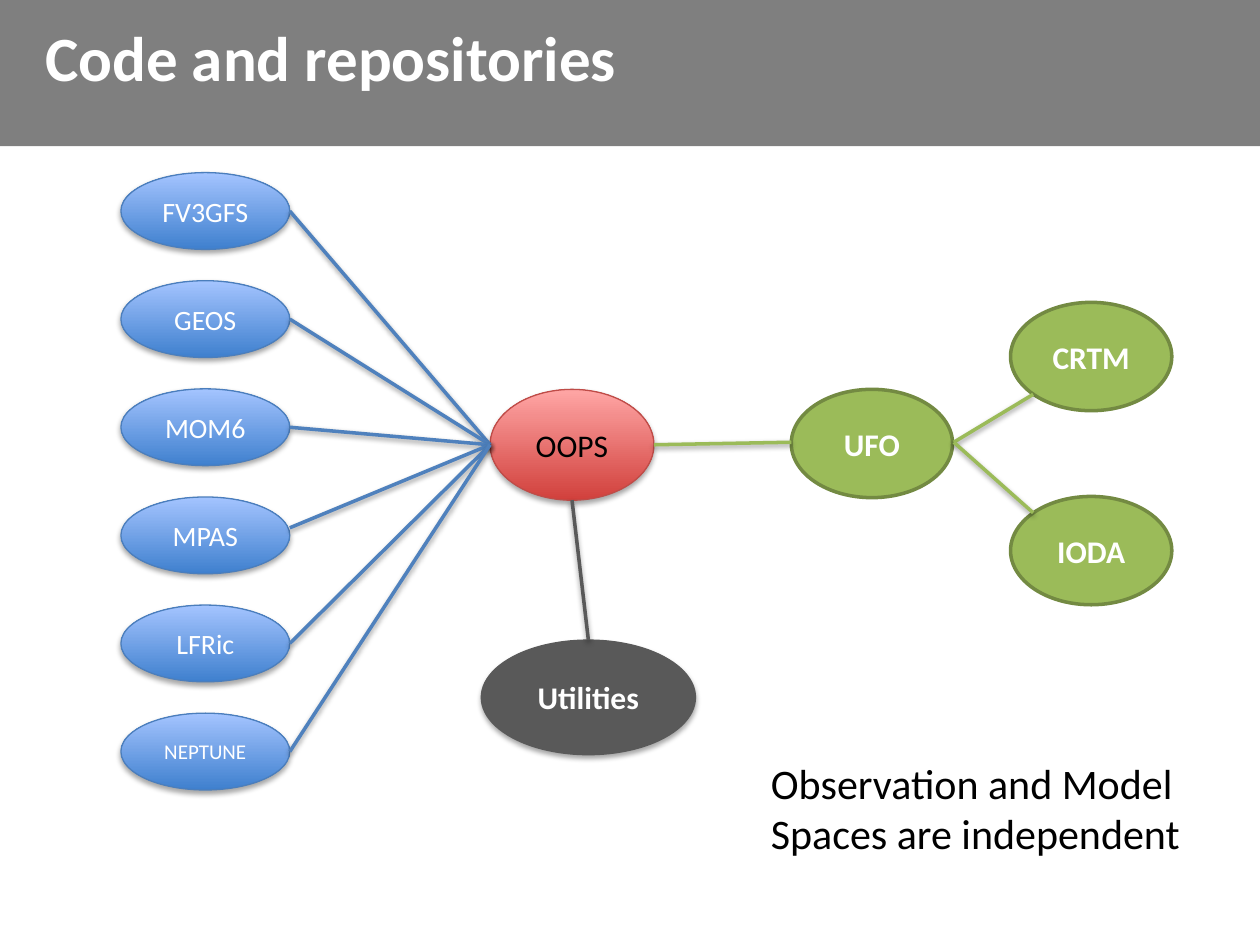
from lxml import etree
from pptx import Presentation
from pptx.dml.color import RGBColor
from pptx.enum.shapes import MSO_CONNECTOR, MSO_SHAPE
from pptx.enum.text import MSO_ANCHOR, PP_ALIGN
from pptx.oxml.ns import qn
from pptx.util import Inches, Pt

FONT = "Calibri"
WHITE, BLACK = "FFFFFF", "000000"
BLUE, GREEN, GRAY = "4F81BD", "9BBB59", "595959"

MODELS = [
    ("FV3GFS", 16, 0),
    ("GEOS", 16, 0),
    ("MOM6", 16, 0),
    ("MPAS", 16, -0.06),
    ("LFRic", 16, 0),
    ("NEPTUNE", 12, 0),
]
MODEL_LEFT, MODEL_TOP, MODEL_PITCH = 0.96, 1.37, 0.858
MODEL_WIDTH, MODEL_HEIGHT = 1.34, 0.61
OBSERVATION_NODES = [("UFO", 6.28, 3.09), ("IODA", 8.02, 3.94), ("CRTM", 8.02, 2.4)]

OOPS_LEFT, OOPS_RIGHT = (3.89, 3.53), (5.19, 3.53)
OOPS_BOTTOM, UTILITIES_TOP = (4.54, 3.97), (4.67, 5.08)
UFO_LEFT, UFO_RIGHT = (6.28, 3.51), (7.57, 3.51)
CRTM_CORNER, IODA_CORNER = (8.2, 3.13), (8.2, 4.07)


def rgb(value):
    return RGBColor.from_string(value)


def add_alpha(color, percent):
    alpha = etree.SubElement(color, qn("a:alpha"))
    alpha.set("val", str(percent * 1000))


def add_shadow(effects, opacity, distance):
    shadow = etree.SubElement(effects, qn("a:outerShdw"))
    shadow.set("blurRad", str(Pt(3.1)))
    shadow.set("dist", str(Pt(distance)))
    shadow.set("dir", "5400000")
    shadow.set("rotWithShape", "0")
    color = etree.SubElement(shadow, qn("a:srgbClr"))
    color.set("val", BLACK)
    add_alpha(color, opacity)


def style_paragraph(paragraph, size, color, bold=False):
    font = paragraph.font
    font.name = FONT
    font.size = Pt(size)
    font.bold = bold
    font.color.rgb = rgb(color)


def add_banner(slide):
    banner = slide.shapes.add_shape(
        MSO_SHAPE.RECTANGLE, 0, 0, Inches(10), Inches(1.16))
    banner.shadow.inherit = False
    banner.fill.solid()
    banner.fill.fore_color.rgb = rgb(BLACK)
    add_alpha(banner.fill._xPr.find(qn("a:solidFill"))[0], 50)
    banner.line.fill.background()


def add_text(slide, box, lines, size, color, bold=False, wrap=True,
             anchor=MSO_ANCHOR.TOP):
    frame = slide.shapes.add_textbox(*map(Inches, box)).text_frame
    frame.word_wrap = wrap
    frame.vertical_anchor = anchor
    frame.text = "\n".join(lines)
    for paragraph in frame.paragraphs:
        style_paragraph(paragraph, size, color, bold)


def add_node(slide, box, label, fill, outline, outline_width=0.75, size=18,
             color=WHITE, bold=False, shadowed=True):
    node = slide.shapes.add_shape(MSO_SHAPE.OVAL, *map(Inches, box))
    if isinstance(fill, tuple):
        node.fill.gradient()
        node.fill.gradient_angle = 90
        for stop, stop_color in zip(node.fill.gradient_stops, fill):
            stop.color.rgb = rgb(stop_color)
    else:
        node.fill.solid()
        node.fill.fore_color.rgb = rgb(fill)
    node.line.color.rgb = rgb(outline)
    node.line.width = Pt(outline_width)
    node.shadow.inherit = False
    if shadowed:
        add_shadow(node._element.spPr.find(qn("a:effectLst")), 35, 1.8)
    frame = node.text_frame
    frame.vertical_anchor = MSO_ANCHOR.MIDDLE
    frame.text = label
    paragraph = frame.paragraphs[0]
    paragraph.alignment = PP_ALIGN.CENTER
    style_paragraph(paragraph, size, color, bold)


def add_link(slide, start, end, color):
    link = slide.shapes.add_connector(
        MSO_CONNECTOR.STRAIGHT, *map(Inches, start + end))
    link.line.color.rgb = rgb(color)
    link.line.width = Pt(2)
    effects = etree.SubElement(link._element.spPr, qn("a:effectLst"))
    add_shadow(effects, 38, 1.6)


def add_models(slide):
    for row, (label, size, link_shift) in enumerate(MODELS):
        top = MODEL_TOP + row * MODEL_PITCH
        add_node(slide, (MODEL_LEFT, top, MODEL_WIDTH, MODEL_HEIGHT), label,
                 ("3F80CE", "A4C4FF"), "4B7EBC", size=size)
        link_start = (MODEL_LEFT + MODEL_WIDTH,
                      top + MODEL_HEIGHT / 2 + link_shift)
        add_link(slide, link_start, OOPS_LEFT, BLUE)


def add_observations(slide):
    for label, left, top in OBSERVATION_NODES:
        add_node(slide, (left, top, 1.28, 0.86), label, GREEN, "738A42", 2,
                 bold=True, shadowed=False)
    add_link(slide, OOPS_RIGHT, UFO_LEFT, GREEN)
    for corner in (CRTM_CORNER, IODA_CORNER):
        add_link(slide, UFO_RIGHT, corner, GREEN)


def main():
    presentation = Presentation()
    presentation.slide_width = Inches(10)
    presentation.slide_height = Inches(7.5)
    slide = presentation.slides.add_slide(presentation.slide_layouts[6])

    add_banner(slide)
    add_text(slide, (0.26, 0, 9.24, 0.89), ["Code and repositories"], 36, WHITE,
             bold=True, anchor=MSO_ANCHOR.MIDDLE)
    add_node(slide, (3.89, 3.09, 1.3, 0.88), "OOPS", ("D1403C", "FFA6A5"),
             "BF4C48", color=BLACK)
    add_models(slide)
    add_observations(slide)
    add_node(slide, (3.82, 5.08, 1.7, 0.91), "Utilities", GRAY, GRAY, bold=True)
    add_link(slide, OOPS_BOTTOM, UTILITIES_TOP, GRAY)
    add_text(slide, (6.02, 5.96, 3.48, 0.91),
             ["Observation and Model", "Spaces are independent"], 24, BLACK,
             wrap=False)

    presentation.save("out.pptx")


if __name__ == "__main__":
    main()
